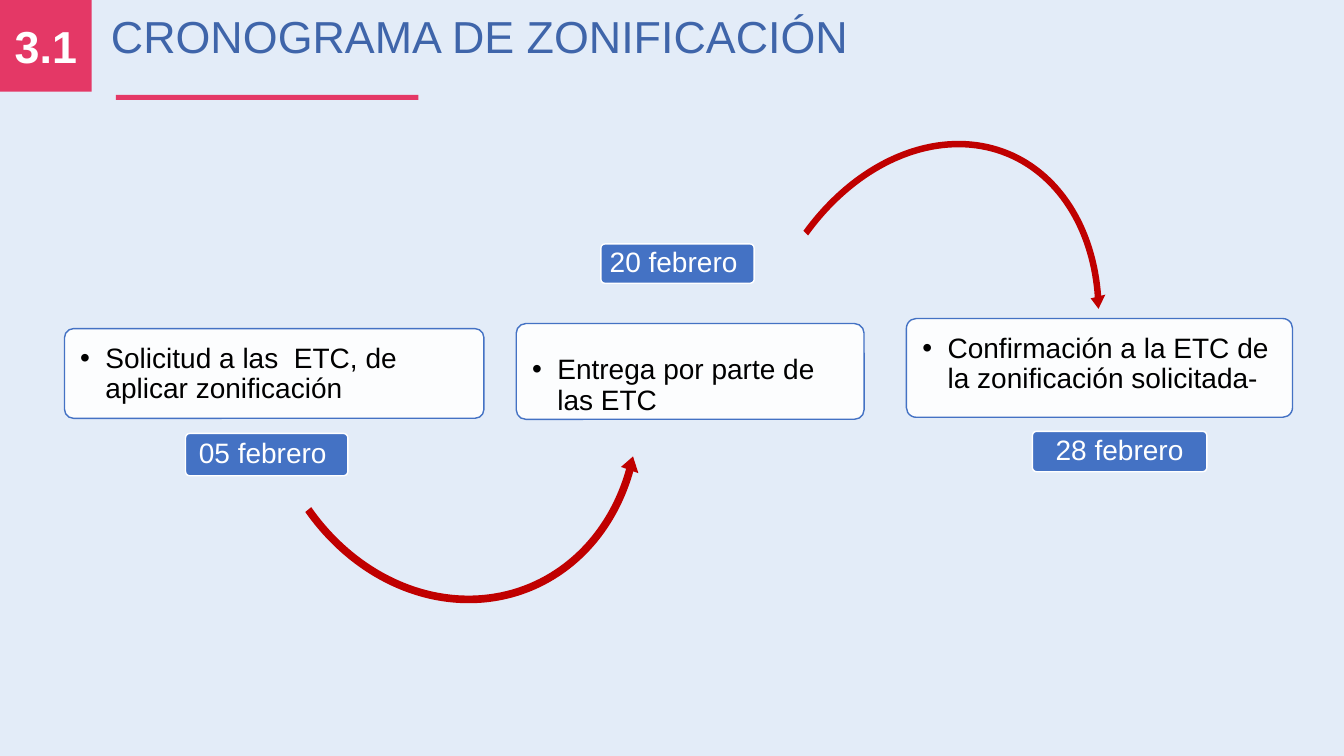
from lxml import etree
from pptx import Presentation
from pptx.dml.color import RGBColor
from pptx.enum.shapes import MSO_SHAPE
from pptx.enum.text import MSO_ANCHOR, MSO_AUTO_SIZE, PP_ALIGN
from pptx.oxml.ns import qn
from pptx.util import Pt

PX = 9144  # 100 px to the inch

RECTANGLE = MSO_SHAPE.RECTANGLE
ROUNDED = MSO_SHAPE.ROUNDED_RECTANGLE
ARROW_OVER = MSO_SHAPE.CIRCULAR_ARROW
ARROW_UNDER = MSO_SHAPE.LEFT_CIRCULAR_ARROW
LEFT, CENTER = PP_ALIGN.LEFT, PP_ALIGN.CENTER
TOP, MIDDLE = MSO_ANCHOR.TOP, MSO_ANCHOR.MIDDLE

BACKGROUND = RGBColor(0xE3, 0xEC, 0xF8)
PINK = RGBColor(0xE4, 0x38, 0x66)
TITLE_BLUE = RGBColor(0x3F, 0x65, 0xAA)
BLUE = RGBColor(0x44, 0x72, 0xC4)
RED = RGBColor(0xC0, 0x00, 0x00)
WHITE = RGBColor(0xFF, 0xFF, 0xFF)
BLACK = RGBColor(0x00, 0x00, 0x00)


def add_block(kind, box, fill, line=None):
    shape = slide.shapes.add_shape(kind, *(length * PX for length in box))
    shape.shadow.inherit = False
    shape.fill.solid()
    shape.fill.fore_color.rgb = fill
    if line is None:
        shape.line.fill.background()
    else:
        shape.line.color.rgb = line
        shape.line.width = Pt(1)
    if kind == ROUNDED:
        shape.adjustments[0] = 0.1
    return shape


def write(shape, text, size, color, align, anchor, insets):
    """Fill the shape with one paragraph; insets are left, top, right, bottom."""
    frame = shape.text_frame
    frame.text = text
    frame.word_wrap = True
    frame.auto_size = MSO_AUTO_SIZE.NONE
    frame.vertical_anchor = anchor
    (frame.margin_left, frame.margin_top,
     frame.margin_right, frame.margin_bottom) = (inset * PX for inset in insets)
    paragraph = frame.paragraphs[0]
    paragraph.alignment = align
    font = paragraph.runs[0].font
    font.name, font.size, font.color.rgb = "Arial", Pt(size), color
    return paragraph


presentation = Presentation()
presentation.slide_width = 1333 * PX
presentation.slide_height = 750 * PX
slide = presentation.slides.add_slide(presentation.slide_layouts[5])
slide.background.fill.solid()
slide.background.fill.fore_color.rgb = BACKGROUND

# Heading
title = slide.shapes.title
title.left, title.top, title.width, title.height = (
    length * PX for length in (100, 4, 1143, 64))
write(title, "CRONOGRAMA DE ZONIFICACIÓN", 32, TITLE_BLUE, LEFT, TOP, (10, 5, 10, 5))

section = add_block(RECTANGLE, (0, 0, 91, 91), PINK)
number = write(section, "3.1", 32, WHITE, CENTER, MIDDLE, (5, 5, 5, 5))
number.runs[0].font.bold = True
add_block(RECTANGLE, (115, 94, 300, 5), PINK)

# Steps: text, card box, top inset, date, date box
steps = [
    ("Solicitud a las  ETC, de aplicar zonificación", (64, 326, 416, 89), 13,
     "05 febrero ", (184, 430, 161, 42)),
    ("Entrega por parte de las ETC", (512, 321, 345, 95), 29,
     "20 febrero ", (596, 242, 152, 39)),
    ("Confirmación a la ETC de la zonificación solicitada-", (899, 316, 383, 98), 13,
     "28 febrero", (1024, 428, 173, 40)),
]
for text, card_box, top_inset, date, date_box in steps:
    card = add_block(ROUNDED, card_box, WHITE, BLUE)
    fill_color = card.fill._xPr.find(qn("a:solidFill"))[0]
    etree.SubElement(fill_color, qn("a:alpha"), val="90000")
    paragraph = write(card, text, 20, BLACK, LEFT, TOP, (13, top_inset, 13, 0))
    paragraph.line_spacing = 0.9
    properties = paragraph._p.get_or_add_pPr()
    properties.set("marL", str(25 * PX))
    properties.set("indent", str(-25 * PX))
    etree.SubElement(properties, qn("a:buFont"), typeface="Arial")
    etree.SubElement(properties, qn("a:buChar"), char="•")

    label = add_block(ROUNDED, date_box, BLUE, WHITE)
    paragraph = write(label, date, 20, WHITE, CENTER, MIDDLE, (5, 4, 5, 4))
    paragraph.line_spacing = 0.9

# Curved arrows between steps: kind, box, rotation, adjustments
arrows = [
    (ARROW_UNDER, (257, 170, 381, 437), 339.6, (0.02, 2.453, 26.472, 96.509, 0.024)),
    (ARROW_OVER, (748, 129, 341, 442), 22.2, (0.019, 2.282, 191.812, 121.604, 0.022)),
]
for kind, box, rotation, adjustments in arrows:
    arrow = add_block(kind, box, RED)
    arrow.rotation = rotation
    for index, value in enumerate(adjustments):
        arrow.adjustments[index] = value

presentation.save("out.pptx")
